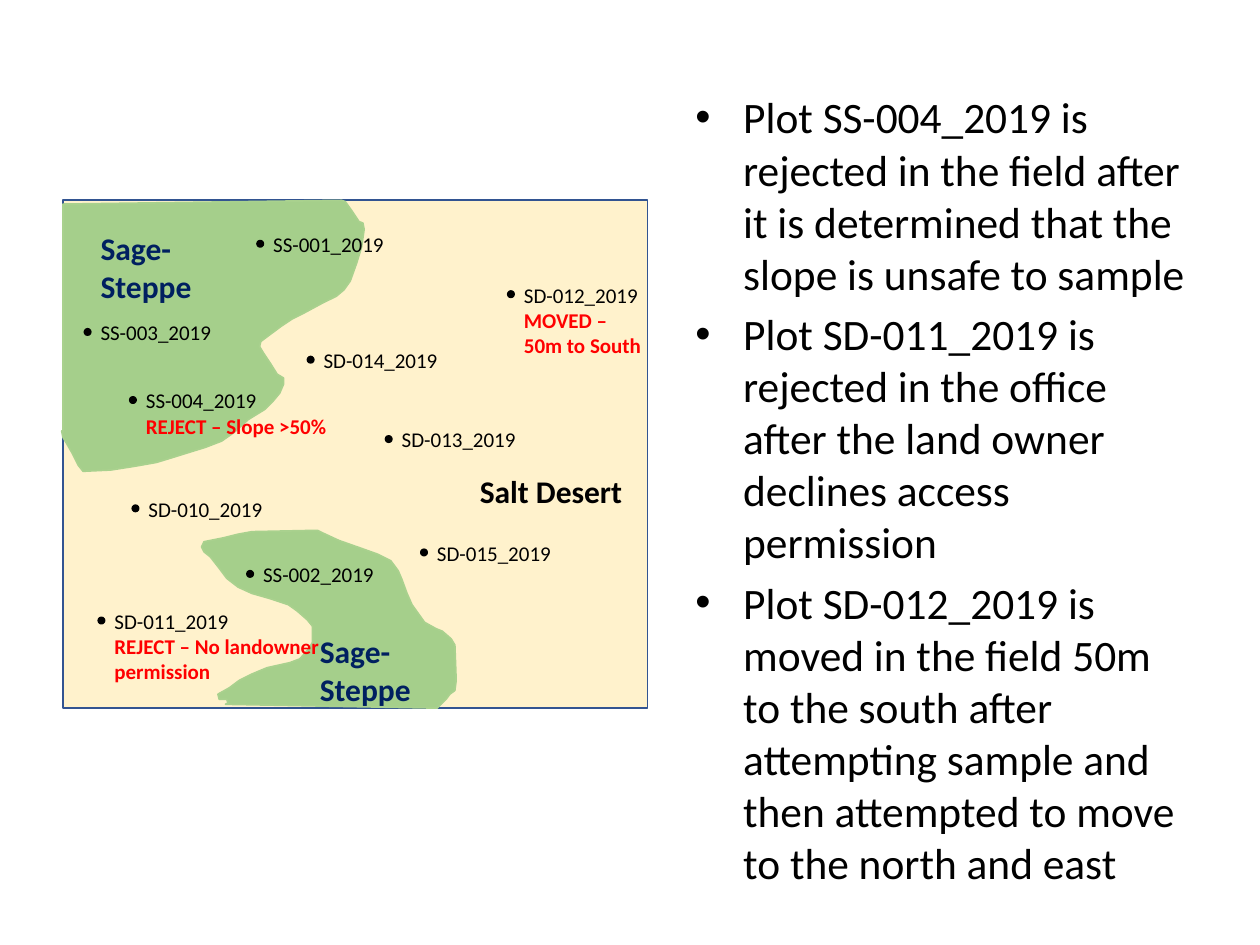
from typing import NamedTuple

from lxml import etree
from pptx import Presentation
from pptx.dml.color import RGBColor
from pptx.enum.shapes import MSO_SHAPE
from pptx.enum.text import MSO_ANCHOR, MSO_AUTO_SIZE
from pptx.oxml.ns import qn
from pptx.util import Inches, Pt

RECTANGLE = MSO_SHAPE.RECTANGLE
OVAL = MSO_SHAPE.OVAL
TOP = MSO_ANCHOR.TOP
NO_FIT = MSO_AUTO_SIZE.NONE
GROW = MSO_AUTO_SIZE.SHAPE_TO_FIT_TEXT

BLACK = RGBColor(0x00, 0x00, 0x00)
RED = RGBColor(0xFF, 0x00, 0x00)
NAVY = RGBColor(0x00, 0x20, 0x60)
SAND = RGBColor(0xFF, 0xF2, 0xCC)
BORDER = RGBColor(0x32, 0x54, 0x91)
SAGE = RGBColor(0xA5, 0xCF, 0x8B)
SAGE_EDGE = RGBColor(0xA9, 0xD1, 0x8E)
FONT = "Calibri"

NORTH_SAGE = [
    (0, .03), (0, 1.84), (-.01, 1.83), (0, 1.88), (.03, 1.93), (.07, 2), (.12, 2.1),
    (.16, 2.15), (.38, 2.14), (.57, 2.11), (.74, 2.08), (.84, 2.05), (1, 2),
    (1.13, 1.96), (1.26, 1.91), (1.36, 1.84), (1.47, 1.74), (1.6, 1.66), (1.67, 1.59),
    (1.72, 1.53), (1.75, 1.46), (1.75, 1.41), (1.7, 1.38), (1.65, 1.3), (1.59, 1.21),
    (1.56, 1.16), (1.57, 1.12), (1.65, 1.06), (1.73, 1), (1.82, .94), (1.92, .89),
    (2.05, .82), (2.17, .76), (2.23, .71), (2.28, .64), (2.33, .5), (2.37, .37),
    (2.39, .23), (2.38, .18), (2.35, .17), (2.29, .08), (2.24, .01), (2.21, 0),
]
SOUTH_SAGE = [
    (1.29, 4), (2.97, 4.03), (3.04, 3.96), (3.07, 3.92), (3.11, 3.89), (3.12, 3.81),
    (3.11, 3.53), (3.08, 3.48), (3.01, 3.42), (2.96, 3.4), (2.87, 3.35), (2.82, 3.28),
    (2.77, 3.21), (2.73, 3.12), (2.69, 3.01), (2.66, 2.94), (2.6, 2.86), (2.5, 2.81),
    (2.36, 2.76), (2.19, 2.7), (2.06, 2.64), (2.02, 2.62), (1.99, 2.62), (1.5, 2.63),
    (1.39, 2.65), (1.27, 2.68), (1.12, 2.71), (1.1, 2.75), (1.12, 2.79), (1.17, 2.83),
    (1.24, 2.92), (1.3, 3), (1.39, 3.07), (1.5, 3.12), (1.64, 3.16), (1.79, 3.21),
    (1.86, 3.26), (1.94, 3.33), (1.98, 3.38), (1.98, 3.51), (1.95, 3.56), (1.88, 3.64),
    (1.8, 3.67), (1.62, 3.71), (1.5, 3.76), (1.4, 3.81), (1.32, 3.87), (1.23, 3.92),
    (1.24, 3.96), (1.3, 3.96), (1.31, 3.99),
]
REGION_NAMES = [
    (1.94, 3.38, "Sage-Steppe", NAVY),
    (.2, .18, "Sage-Steppe", NAVY),
    (3.21, 2.11, "Salt Desert", BLACK),
]
PLOTS = [
    (1.54, .32, "SS-001_2019", [], 1),
    (.53, 1.56, "SS-004_2019", ["REJECT – Slope >50%"], 2),
    (1.46, 2.94, "SS-002_2019", [], 1),
    (.17, 1.02, "SS-003_2019", [], 1),
    (3.53, .72, "SD-012_2019", ["MOVED –", "50m to South"], 3),
    (1.94, 1.24, "SD-014_2019", [], 1),
    (2.84, 2.77, "SD-015_2019", [], 1),
    (.28, 3.31, "SD-011_2019", ["REJECT – No landowner permission"], 3),
    (2.56, 1.87, "SD-013_2019", [], 1),
    (.55, 2.42, "SD-010_2019", [], 1),
]
FINDINGS = [
    "Plot SS-004_2019 is rejected in the field after it is determined that the slope is "
    "unsafe to sample",
    "Plot SD-011_2019 is rejected in the office after the land owner declines access "
    "permission",
    "Plot SD-012_2019 is moved in the field 50m to the south after attempting sample and "
    "then attempted to move to the north and east",
]


class Box(NamedTuple):
    left: float
    top: float
    width: float
    height: float

    def inside(self, left, top, width, height):
        return Box(self.left + left, self.top + top, width, height)

    def lengths(self):
        return [Inches(value) for value in self]


def paint(shape, fill, line):
    shape.shadow.inherit = False
    shape.fill.solid()
    shape.fill.fore_color.rgb = fill
    shape.line.color.rgb = line
    shape.line.width = Pt(1)


def add_text_frame(shapes, box, fit=GROW):
    frame = shapes.add_textbox(*box.lengths()).text_frame
    frame.word_wrap = True
    frame.auto_size = fit
    frame.vertical_anchor = TOP
    return frame


def write(frame, text, size=12, color=BLACK, bold=False):
    para = frame.paragraphs[0]
    if para.runs:
        para = frame.add_paragraph()
    span = para.add_run()
    span.text = text
    span.font.name = FONT
    span.font.size = Pt(size)
    span.font.bold = bold
    span.font.color.rgb = color
    return para


def add_bullet(para, indent):
    properties = para._p.get_or_add_pPr()
    properties.set("marL", str(indent))
    properties.set("indent", str(-indent))
    etree.SubElement(properties, qn("a:buFont")).set("typeface", "Arial")
    etree.SubElement(properties, qn("a:buChar")).set("char", "•")


def add_vegetation(shapes, box, outline):
    corners = [(Inches(x), Inches(y)) for x, y in outline]
    builder = shapes.build_freeform(*corners[0])
    builder.add_line_segments(corners[1:], close=True)
    region = builder.convert_to_shape(Inches(box.left), Inches(box.top))
    paint(region, SAGE, SAGE_EDGE)


def add_map(page, box):
    shapes = page.shapes.add_group_shape().shapes
    paint(shapes.add_shape(RECTANGLE, *box.lengths()), SAND, BORDER)
    for outline in (NORTH_SAGE, SOUTH_SAGE):
        add_vegetation(shapes, box, outline)
    for left, top, name, color in REGION_NAMES:
        frame = add_text_frame(shapes, box.inside(left, top, 1.34, .28))
        write(frame, name, size=18, color=color, bold=True)


def add_plots(page, box):
    for left, top, name, notes, rows in PLOTS:
        dot = box.inside(left, top, .05, .05)
        paint(page.shapes.add_shape(OVAL, *dot.lengths()), BLACK, BLACK)
        label = dot.inside(.03, -.12, 2.56, .1 + .2 * rows)
        frame = add_text_frame(page.shapes, label)
        write(frame, name)
        for note in notes:
            write(frame, note, color=RED, bold=True)


def add_findings(page, box):
    frame = add_text_frame(page.shapes, box, fit=NO_FIT)
    frame.margin_right = Inches(.05)
    for finding in FINDINGS:
        para = write(frame, finding, size=24.8)
        para.space_before = Pt(4.7)
        add_bullet(para, Inches(.38))


def main():
    deck = Presentation()
    deck.slide_width = Inches(10)
    deck.slide_height = Inches(7.5)
    page = deck.slides.add_slide(deck.slide_layouts[6])
    map_box = Box(.5, 1.59, 4.64, 4.03)
    add_findings(page, Box(5.42, .67, 4.08, 6.03))
    add_map(page, map_box)
    add_plots(page, map_box)
    deck.save("out.pptx")


if __name__ == "__main__":
    main()
